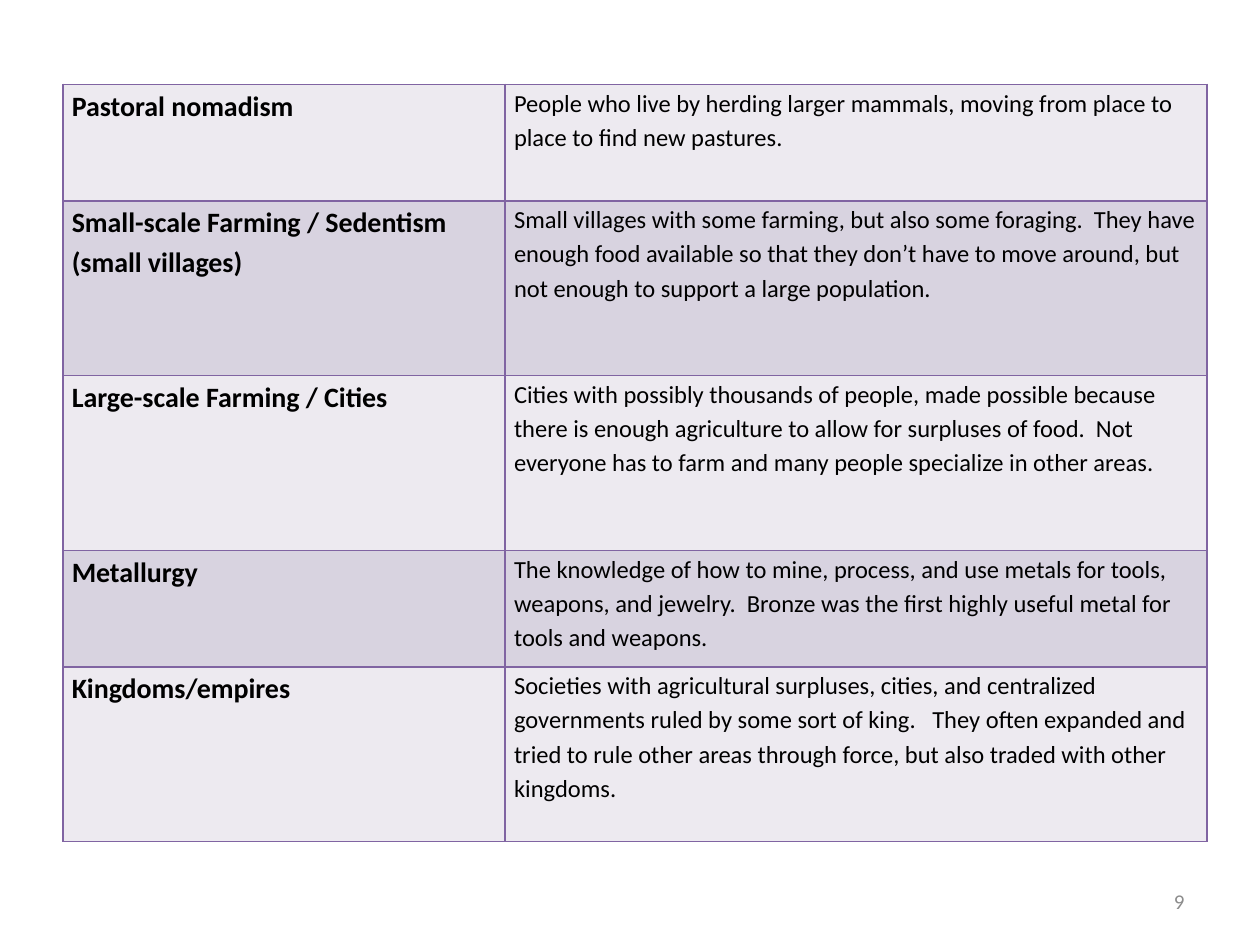
from dataclasses import dataclass

from lxml import etree
from pptx import Presentation
from pptx.dml.color import RGBColor
from pptx.enum.text import MSO_ANCHOR, PP_ALIGN
from pptx.oxml.ns import qn
from pptx.util import Inches, Pt

RIGHT = PP_ALIGN.RIGHT
MIDDLE = MSO_ANCHOR.MIDDLE
FONT = "Calibri"
BLACK, GRAY, PURPLE = "000000", "8C8C8C", "8064A2"
BAND_FILLS = ("EDEAF0", "D8D3E0")
TABLE_LEFT, TABLE_TOP = 0.5, 0.67
COLUMN_WIDTHS = (3.51, 5.57)
TABLE_HEIGHT = 6.01


@dataclass(frozen=True)
class Entry:
    term: str
    meaning: str
    units: int  # row height in equal shares of the table


ENTRIES = (
    Entry("Pastoral nomadism",
          "People who live by herding larger mammals, moving from place to place "
          "to find new pastures.", 2),
    Entry("Small-scale Farming / Sedentism (small villages)",
          "Small villages with some farming, but also some foraging.  They have "
          "enough food available so that they don’t have to move around, but not "
          "enough to support a large population.", 3),
    Entry("Large-scale Farming / Cities",
          "Cities with possibly thousands of people, made possible because there "
          "is enough agriculture to allow for surpluses of food.  Not everyone "
          "has to farm and many people specialize in other areas.", 3),
    Entry("Metallurgy",
          "The knowledge of how to mine, process, and use metals for tools, "
          "weapons, and jewelry.  Bronze was the first highly useful metal for "
          "tools and weapons.", 2),
    Entry("Kingdoms/empires",
          "Societies with agricultural surpluses, cities, and centralized "
          "governments ruled by some sort of king.   They often expanded and "
          "tried to rule other areas through force, but also traded with other "
          "kingdoms.", 3),
)


def color(value: str) -> RGBColor:
    return RGBColor.from_string(value)


def set_font(para, size: float, value: str, bold: bool = False) -> None:
    font = para.font
    font.name, font.size, font.bold = FONT, Pt(size), bold
    font.color.rgb = color(value)


def add_borders(cell, value: str, width: float) -> None:
    properties = cell._tc.get_or_add_tcPr()
    for index, side in enumerate(("lnL", "lnR", "lnT", "lnB")):
        line = etree.Element(qn(f"a:{side}"), w=str(Pt(width)))
        fill = etree.SubElement(line, qn("a:solidFill"))
        etree.SubElement(fill, qn("a:srgbClr"), val=value)
        properties.insert(index, line)


def fill_cell(cell, text: str, size: float, bold: bool, fill: str) -> None:
    cell.margin_left = cell.margin_right = Inches(0.07)
    cell.margin_top = cell.margin_bottom = 0
    cell.fill.solid()
    cell.fill.fore_color.rgb = color(fill)
    add_borders(cell, PURPLE, 1)
    para = cell.text_frame.paragraphs[0]
    para.text = text
    para.line_spacing = 1.15
    set_font(para, size, BLACK, bold)


def add_glossary(page) -> None:
    unit = TABLE_HEIGHT / sum(entry.units for entry in ENTRIES)
    table = page.shapes.add_table(
        len(ENTRIES), len(COLUMN_WIDTHS), Inches(TABLE_LEFT), Inches(TABLE_TOP),
        Inches(sum(COLUMN_WIDTHS)), Inches(TABLE_HEIGHT)).table
    table.first_row = table.horz_banding = False
    for column, width in zip(table.columns, COLUMN_WIDTHS):
        column.width = Inches(width)
    for index, (row, entry) in enumerate(zip(table.rows, ENTRIES)):
        row.height = Inches(entry.units * unit)
        fill = BAND_FILLS[index % len(BAND_FILLS)]
        fill_cell(row.cells[0], entry.term, 16, True, fill)
        fill_cell(row.cells[1], entry.meaning, 14, False, fill)


def add_page_number(page, number: str) -> None:
    box = page.shapes.add_textbox(Inches(7.17), Inches(6.95), Inches(2.33), Inches(0.4))
    frame = box.text_frame
    frame.word_wrap = True
    frame.vertical_anchor = MIDDLE
    para = frame.paragraphs[0]
    para.text = number
    para.alignment = RIGHT
    set_font(para, 12, GRAY)


def main() -> None:
    deck = Presentation()
    deck.slide_width, deck.slide_height = Inches(10), Inches(7.5)
    page = deck.slides.add_slide(deck.slide_layouts[6])
    add_page_number(page, "9")
    add_glossary(page)
    deck.save("out.pptx")


if __name__ == "__main__":
    main()
